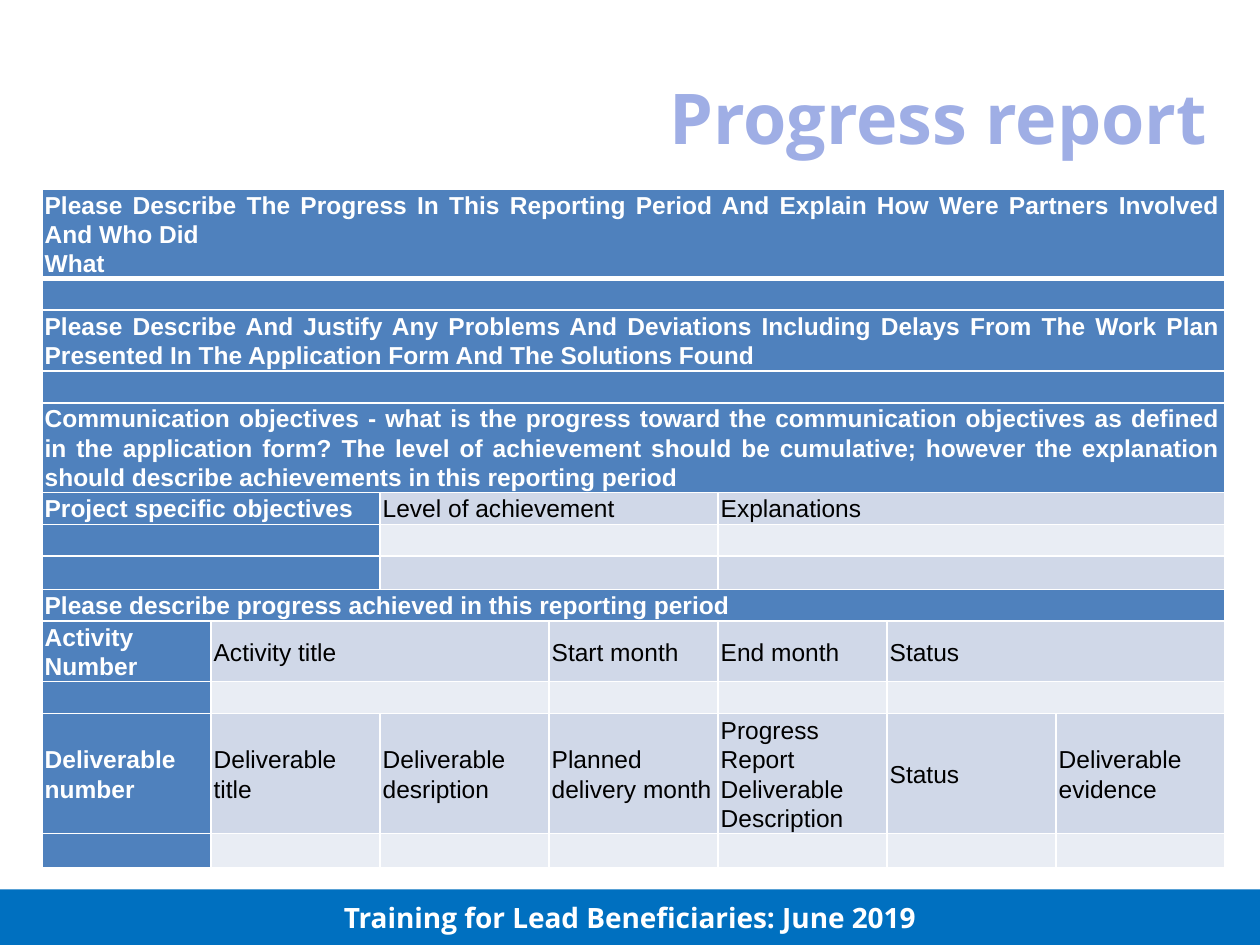
from lxml import etree
from pptx import Presentation, util as u
from pptx.dml.color import RGBColor
from pptx.enum import shapes, text
from pptx.oxml import ns

WHITE = RGBColor(0xFF, 0xFF, 0xFF)
BLACK = RGBColor(0, 0, 0)
LILAC = RGBColor(0x9F, 0xAE, 0xE5)
AZURE = RGBColor(0x00, 0x70, 0xC0)
BLUE = RGBColor(0x4F, 0x81, 0xBD)
PALE = RGBColor(0xE9, 0xED, 0xF4)
GREY = RGBColor(0xD0, 0xD8, 0xE8)

COLS = 7
ROWS = [
    (1.78, [(7, "Please Describe The Progress In This Reporting Period And Explain "
                "How Were Partners Involved And Who Did\nWhat")]),
    (0.64, [(7, "")]),
    (1.23, [(7, "Please Describe And Justify Any Problems And Deviations Including "
                "Delays From The Work Plan Presented In The Application Form And "
                "The Solutions Found")]),
    (0.64, [(7, "")]),
    (1.81, [(7, "Communication objectives - what is the progress toward the "
                "communication objectives as defined in the application form? The "
                "level of achievement should be cumulative; however the explanation "
                "should describe achievements in this reporting period")]),
    (0.64, [(2, "Project specific objectives"), (2, "Level of achievement"),
            (3, "Explanations")]),
    (0.64, [(2, ""), (2, ""), (3, "")]),
    (0.67, [(2, ""), (2, ""), (3, "")]),
    (0.64, [(7, "Please describe progress achieved in this reporting period")]),
    (1.22, [(1, "Activity\nNumber"), (2, "Activity title"), (1, "Start month"),
            (1, "End month"), (2, "Status")]),
    (0.64, [(1, ""), (2, ""), (1, ""), (1, ""), (2, "")]),
    (2.42, [(1, "Deliverable number"), (1, "Deliverable title"),
            (1, "Deliverable desription"), (1, "Planned delivery month"),
            (1, "Progress\nReport\nDeliverable\nDescription"), (1, "Status"),
            (1, "Deliverable evidence")]),
    (0.69, [(1, "")] * COLS),
]


def style(font, face, size, color, bold):
    """Set the face, size, colour and weight of a font."""
    font.name, font.size, font.bold = face, u.Pt(size), bold
    font.color.rgb = color


def edge(cell, top, base):
    """Draw white cell borders with the given top and bottom widths."""
    props = cell._tc.get_or_add_tcPr()
    for spot, (side, width) in enumerate(zip("LRTB", (1, 1, top, base))):
        line = etree.Element(ns.qn("a:ln" + side), w=str(u.Pt(width)))
        fill = etree.SubElement(line, ns.qn("a:solidFill"))
        etree.SubElement(fill, ns.qn("a:srgbClr"), val=str(WHITE))
        props.insert(spot, line)


def write(cell, words, color, bold, align):
    """Fill one cell with its words."""
    cell.margin_left, cell.margin_right = u.Cm(0.05), u.Cm(0.1)
    cell.margin_top, cell.margin_bottom = u.Cm(0.02), 0
    cell.text_frame.text = words
    for par in cell.text_frame.paragraphs:
        par.alignment, par.line_spacing = align, 1.07
        for run in par.runs:
            style(run.font, "Arial", 14, color, bold)
        if not par.runs:
            etree.SubElement(par._p, ns.qn("a:endParaRPr"), sz="1200")


def title(slide, left, top, width, height):
    """Place the slide title."""
    box = slide.shapes.title
    box.left, box.top, box.width, box.height = left, top, width, height
    frame = box.text_frame
    frame.text = "Progress report"
    frame.auto_size = text.MSO_AUTO_SIZE.NONE
    frame.vertical_anchor = text.MSO_ANCHOR.MIDDLE
    par = frame.paragraphs[0]
    par.alignment = text.PP_ALIGN.CENTER
    style(par.runs[0].font, "Open Sans", 40, LILAC, True)


def report(slide, left, top, width, height):
    """Place the report form as a table."""
    table = slide.shapes.add_table(len(ROWS), COLS, left, top, width, height).table
    for col in table.columns:
        col.width = width // COLS
    for i, (tall, parts) in enumerate(ROWS):
        table.rows[i].height = u.Cm(tall)
        for cell in table.rows[i].cells:
            edge(cell, 3 if i == 1 else 1, 3 if i == 0 else 1)
        start = 0
        for span, words in parts:
            cell = table.cell(i, start)
            if span > 1:
                cell.merge(table.cell(i, start + span - 1))
            head = start == 0
            cell.fill.solid()
            cell.fill.fore_color.rgb = BLUE if head else GREY if i % 2 else PALE
            if i > 8:
                cell.vertical_anchor = text.MSO_ANCHOR.MIDDLE
            align = text.PP_ALIGN.JUSTIFY if span == COLS else text.PP_ALIGN.LEFT
            write(cell, words, WHITE if head else BLACK, head, align)
            start += span


def footer(slide, left, top, width, height):
    """Place the event banner."""
    bar = slide.shapes.add_shape(shapes.MSO_SHAPE.RECTANGLE, left, top, width, height)
    bar.shadow.inherit = False
    bar.fill.solid()
    bar.fill.fore_color.rgb = AZURE
    bar.line.fill.background()
    frame = bar.text_frame
    frame.text = "Training for Lead Beneficiaries: June 2019"
    frame.vertical_anchor = text.MSO_ANCHOR.MIDDLE
    par = frame.paragraphs[0]
    par.alignment = text.PP_ALIGN.CENTER
    style(par.runs[0].font, "Open Sans", 16, WHITE, True)


def main():
    """Build and save the slide."""
    deck = Presentation()
    deck.slide_width, deck.slide_height = u.Cm(25.4), u.Cm(19.05)
    slide = deck.slides.add_slide(deck.slide_layouts[5])
    footer(slide, 0, u.Cm(17.93), deck.slide_width, u.Cm(1.12))
    title(slide, u.Cm(13.11), u.Cm(1.37), u.Cm(11.6), u.Cm(1.96))
    tall = u.Cm(sum(row[0] for row in ROWS))
    report(slide, u.Cm(0.85), u.Cm(3.81), u.Cm(23.85), tall)
    deck.save("out.pptx")


if __name__ == "__main__":
    main()
